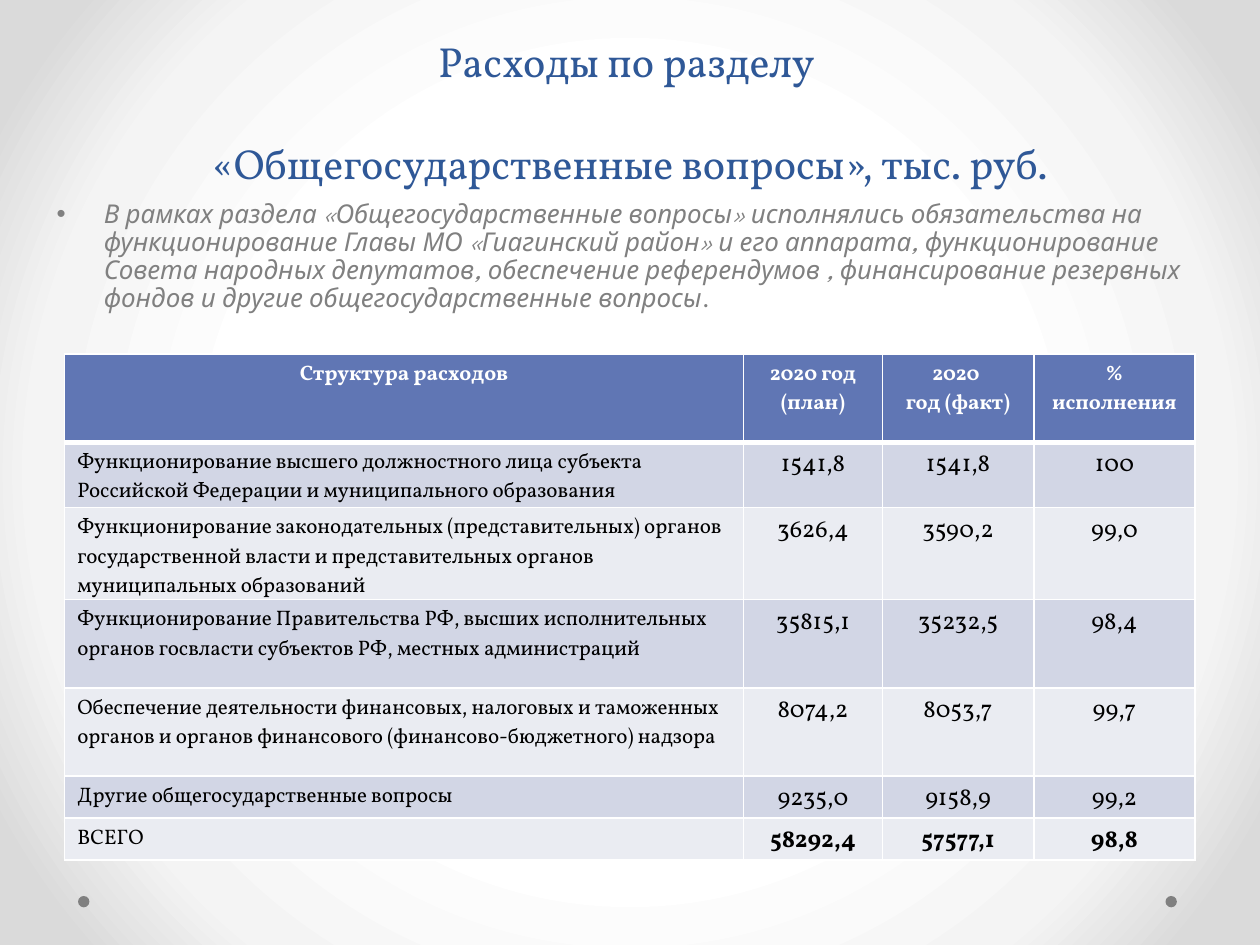
from lxml import etree
from pptx import Presentation
from pptx.dml.color import RGBColor
from pptx.enum.shapes import MSO_SHAPE
from pptx.enum.text import MSO_ANCHOR, PP_ALIGN
from pptx.oxml import parse_xml
from pptx.oxml.ns import qn
from pptx.util import Pt

CENTER, LEFT = PP_ALIGN.CENTER, PP_ALIGN.LEFT
BOTTOM = MSO_ANCHOR.BOTTOM
OVAL = MSO_SHAPE.OVAL
SERIF, SANS = "Vollkorn", "League Spartan"
HEX = {"title": "2F5897", "gray": "808080", "head": "6076B4", "odd": "D2D6E5",
       "even": "EAECF2", "white": "FFFFFF", "black": "000000"}
NS = ('xmlns:a="http://schemas.openxmlformats.org/drawingml/2006/main" '
      'xmlns:p="http://schemas.openxmlformats.org/presentationml/2006/main"')


def add_run(para, text, font, size, color, bold=False, italic=False):
    run = para.add_run()
    run.text = text
    run.font.name, run.font.size = font, Pt(size)
    run.font.bold, run.font.italic = bold, italic
    run.font.color.rgb = RGBColor.from_string(HEX[color])


def add_edges(cell, low):
    """Draw white cell borders; low is the width of the bottom one."""
    props = cell._tc.get_or_add_tcPr()
    for spot, (side, wide) in enumerate([("L", 1), ("R", 1), ("T", 1), ("B", low)]):
        props.insert(spot, parse_xml(
            f'<a:ln{side} {NS} w="{Pt(wide)}"><a:solidFill>'
            f'<a:srgbClr val="{HEX["white"]}"/></a:solidFill></a:ln{side}>'))


prs = Presentation()
prs.slide_width, prs.slide_height = Pt(720), Pt(540)
slide = prs.slides.add_slide(prs.slide_layouts[5])
shapes = slide.shapes

# Background: white centre, gray corners
stops = "".join(f'<a:gs pos="{pos}000"><a:srgbClr val="{tone}"/></a:gs>'
                for pos, tone in [(50, "FFFFFF"), (76, "F4F4F4"), (92, "DADADA")])
slide.element.cSld.insert(0, parse_xml(
    f'<p:bg {NS}><p:bgPr><a:gradFill rotWithShape="1"><a:gsLst>{stops}</a:gsLst>'
    '<a:path path="circle"><a:fillToRect l="50000" t="50000" r="50000" b="50000"/>'
    '</a:path></a:gradFill><a:effectLst/></p:bgPr></p:bg>'))

for left in (666, 44.6):
    dot = shapes.add_shape(OVAL, Pt(left), Pt(512), Pt(6.5), Pt(6.5))
    dot.shadow.inherit = False
    dot.fill.solid()
    dot.fill.fore_color.rgb = RGBColor.from_string(HEX["gray"])
    dot.line.fill.background()

# Title
title = shapes.title
title.left, title.top, title.width, title.height = Pt(-20), Pt(54.7), Pt(760), Pt(56.2)
frame = title.text_frame
frame.vertical_anchor = BOTTOM
para = frame.paragraphs[0]
para.alignment, para.line_spacing = CENTER, Pt(58)
add_run(para, "Расходы по разделу ", SERIF, 24, "title")
para.add_line_break()
add_run(para, "«Общегосударственные вопросы», тыс. руб.", SERIF, 24, "title")

# Introduction
frame = shapes.add_textbox(Pt(25.2), Pt(111.6), Pt(663), Pt(90.7)).text_frame
frame.word_wrap = True
para = frame.paragraphs[0]
para.line_spacing = 0.9
props = para._p.get_or_add_pPr()
props.set("marL", str(Pt(27)))
props.set("indent", str(Pt(-27)))
etree.SubElement(props, qn("a:buFont"), typeface="Arial")
etree.SubElement(props, qn("a:buChar"), char="•")
add_run(para, "В рамках раздела «Общегосударственные вопросы» исполнялись обязательства "
        "на функционирование Главы МО «Гиагинский район» и его аппарата, "
        "функционирование Совета народных депутатов, обеспечение референдумов , "
        "финансирование резервных фондов и другие общегосударственные вопросы",
        SANS, 14.8, "gray", italic=True)
add_run(para, ".", SANS, 14.8, "gray")

# Spending table
rows = [
    ("Структура расходов", "2020 год\n(план)", "2020 \nгод (факт)", "% исполнения"),
    ("Функционирование высшего должностного лица субъекта Российской Федерации "
     "и муниципального образования", "1541,8", "1541,8", "100"),
    ("Функционирование законодательных (представительных) органов государственной "
     "власти и представительных органов муниципальных образований",
     "3626,4", "3590,2", "99,0"),
    ("Функционирование Правительства РФ, высших исполнительных органов госвласти "
     "субъектов РФ, местных администраций", "35815,1", "35232,5", "98,4"),
    ("Обеспечение деятельности финансовых, налоговых и таможенных органов и органов "
     "финансового (финансово-бюджетного) надзора", "8074,2", "8053,7", "99,7"),
    ("Другие общегосударственные вопросы", "9235,0", "9158,9", "99,2"),
    ("ВСЕГО", "58292,4", "57577,1", "98,8"),
]
widths = [388, 79.2, 86.6, 92.2]
heights = [50.4, 37.4, 52.6, 50.4, 50.4, 23.8, 23.8]
table = shapes.add_table(len(rows), len(widths), Pt(37), Pt(202.3),
                         Pt(sum(widths)), Pt(sum(heights))).table
for col, width in zip(table.columns, widths):
    col.width = Pt(width)
for r, (row, height) in enumerate(zip(rows, heights)):
    table.rows[r].height = Pt(height)
    head, total = r == 0, r == len(rows) - 1
    for c, text in enumerate(row):
        cell = table.cell(r, c)
        cell.fill.solid()
        tone = "head" if head else "odd" if r % 2 else "even"
        cell.fill.fore_color.rgb = RGBColor.from_string(HEX[tone])
        add_edges(cell, 3 if head else 1)
        for n, line in enumerate(text.split("\n")):
            frame = cell.text_frame
            para = frame.add_paragraph() if n else frame.paragraphs[0]
            para.alignment = CENTER if head or c else LEFT
            add_run(para, line, SERIF, 12 if head or c == 0 else 14,
                    "white" if head else "black", bold=head or (total and c > 0))

prs.save("out.pptx")
